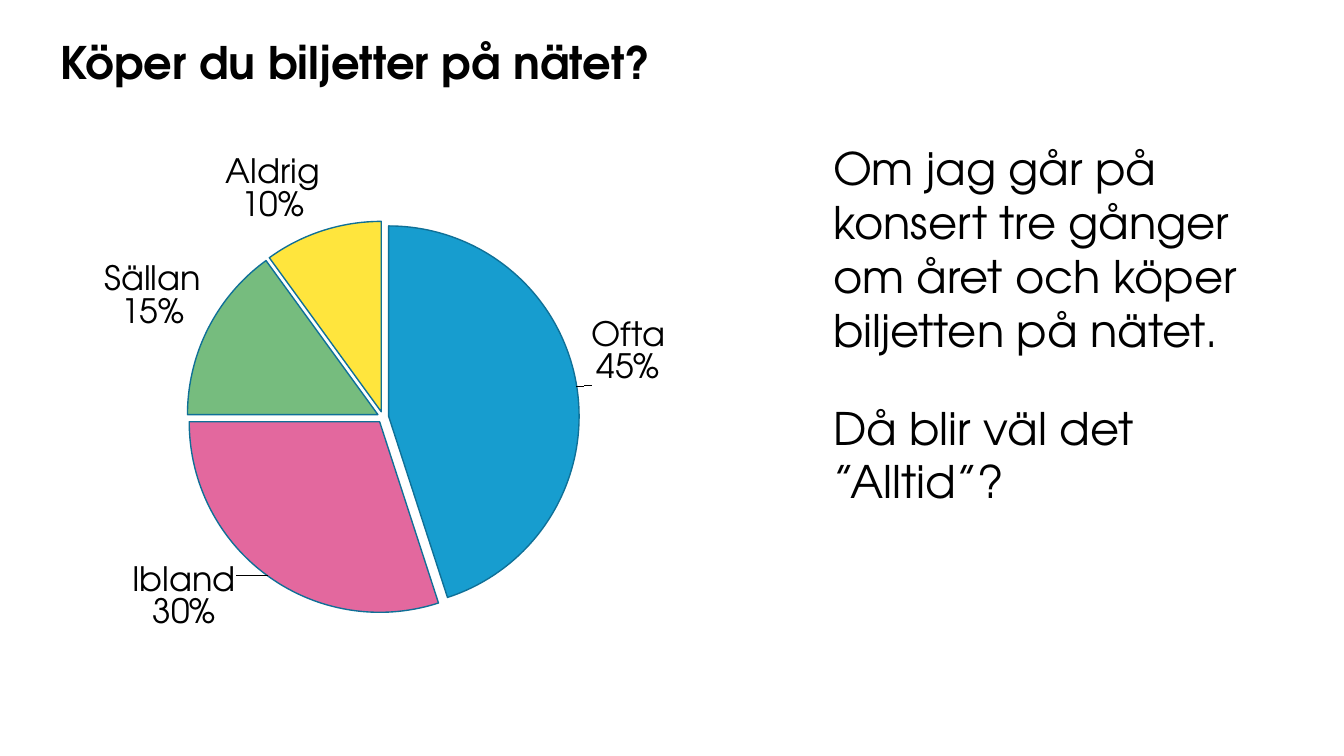
from lxml import etree
from pptx import Presentation
from pptx.chart.data import CategoryChartData
from pptx.dml.color import RGBColor
from pptx.enum.chart import XL_CHART_TYPE, XL_LABEL_POSITION
from pptx.oxml.ns import qn
from pptx.util import Inches, Pt

PIE = XL_CHART_TYPE.PIE
OUTSIDE_END = XL_LABEL_POSITION.OUTSIDE_END

FONT = "TeX Gyre Adventor"
BLACK = "000000"
OUTLINE = "0F7097"

# Content: text, left, top, width, height, bold
TEXTS = [
    ("Om jag går på konsert tre gånger om året och köper biljetten på nätet.",
     6.1, 1, 3.39, 1.72, False),
    ("Då blir väl det ”Alltid”?", 6.1, 2.93, 3.08, 0.91, False),
    ("Köper du biljetter på nätet?", 0.35, 0.21, 5.12, 0.5, True),
]
# Answer, percent, slice colour, label shift as a share of the chart
SLICES = [
    ("Ofta", 45, "179DCF", (0.01, 0)),
    ("Ibland", 30, "E3689E", (-0.04, -0.03)),
    ("Sällan", 15, "76BC7E", (0, 0.01)),
    ("Aldrig", 10, "FFE53D", (0, 0)),
]
CHART_BOX = (0.28, 1, 5.04, 4.05)
PLOT_BOX = {"x": 0.22, "y": 0.17, "w": 0.58, "h": 0.7}
EXPLOSION = 3


def color(value):
    return RGBColor.from_string(value)


def set_font(font, size, bold=False):
    for name, value in {"name": FONT, "size": Pt(size), "bold": bold}.items():
        setattr(font, name, value)
    font.color.rgb = color(BLACK)


def chart_element(tag, value=None):
    element = etree.Element(qn("c:" + tag))
    if value is not None:
        element.set("val", str(value))
    return element


def manual_layout(modes, place):
    layout = chart_element("layout")
    manual = chart_element("manualLayout")
    layout.append(manual)
    for tag, value in {**modes, **place}.items():
        manual.append(chart_element(tag, value))
    return layout


# Widescreen 16:9 page
deck = Presentation()
deck.slide_width = Inches(10)
deck.slide_height = deck.slide_width * 9 // 16
page = deck.slides.add_slide(deck.slide_layouts[6])

# Title and comments
for text, left, top, width, height, bold in TEXTS:
    box = page.shapes.add_textbox(*map(Inches, (left, top, width, height)))
    box.text_frame.word_wrap = True
    span = box.text_frame.paragraphs[0].add_run()
    span.text = text
    set_font(span.font, 24, bold)

# Pie chart
data = CategoryChartData()
data.categories = [answer for answer, *_ in SLICES]
data.add_series("Series 1", [percent for _, percent, *_ in SLICES])
chart = page.shapes.add_chart(PIE, *map(Inches, CHART_BOX), data).chart
chart.has_legend = False
chart.has_title = False
set_font(chart.font, 18)
plot = chart.plots[0]
plot.vary_by_categories = True
series = plot.series[0]

# Slices and their labels
for index, (_, _, fill, _) in enumerate(SLICES):
    point = series.points[index]
    point.format.fill.solid()
    point.format.fill.fore_color.rgb = color(fill)
    point.format.line.color.rgb = color(OUTLINE)
    point.format.line.width = Pt(0.75)
    label = point.data_label
    set_font(label.font, 18)
    label.position = OUTSIDE_END

labels = series.data_labels
for name, value in {"show_category_name": True, "show_percentage": True,
                    "show_value": False, "position": OUTSIDE_END}.items():
    setattr(labels, name, value)
set_font(labels.font, 18)

# Label contents and shifts
series_xml = series._element
for label_xml, (*_, (x, y)) in zip(series_xml.iter(qn("c:dLbl")), SLICES):
    label_xml.find(qn("c:idx")).addnext(manual_layout({}, {"x": x, "y": y}))
    for tag, value in {"showVal": 0, "showCatName": 1, "showPercent": 1}.items():
        label_xml.find(qn("c:" + tag)).set("val", str(value))
    separator = chart_element("separator")
    separator.text = "\n"
    label_xml.append(separator)

# Gaps between slices
for point_xml in series_xml.findall(qn("c:dPt")):
    point_xml.find(qn("c:spPr")).addprevious(chart_element("explosion", EXPLOSION))

# Plot position inside the chart
plot_area = chart._chartSpace.find(".//" + qn("c:plotArea"))
for old_layout in plot_area.findall(qn("c:layout")):
    plot_area.remove(old_layout)
modes = {"layoutTarget": "inner", "xMode": "edge", "yMode": "edge"}
plot_area.insert(0, manual_layout(modes, PLOT_BOX))

deck.save("out.pptx")
